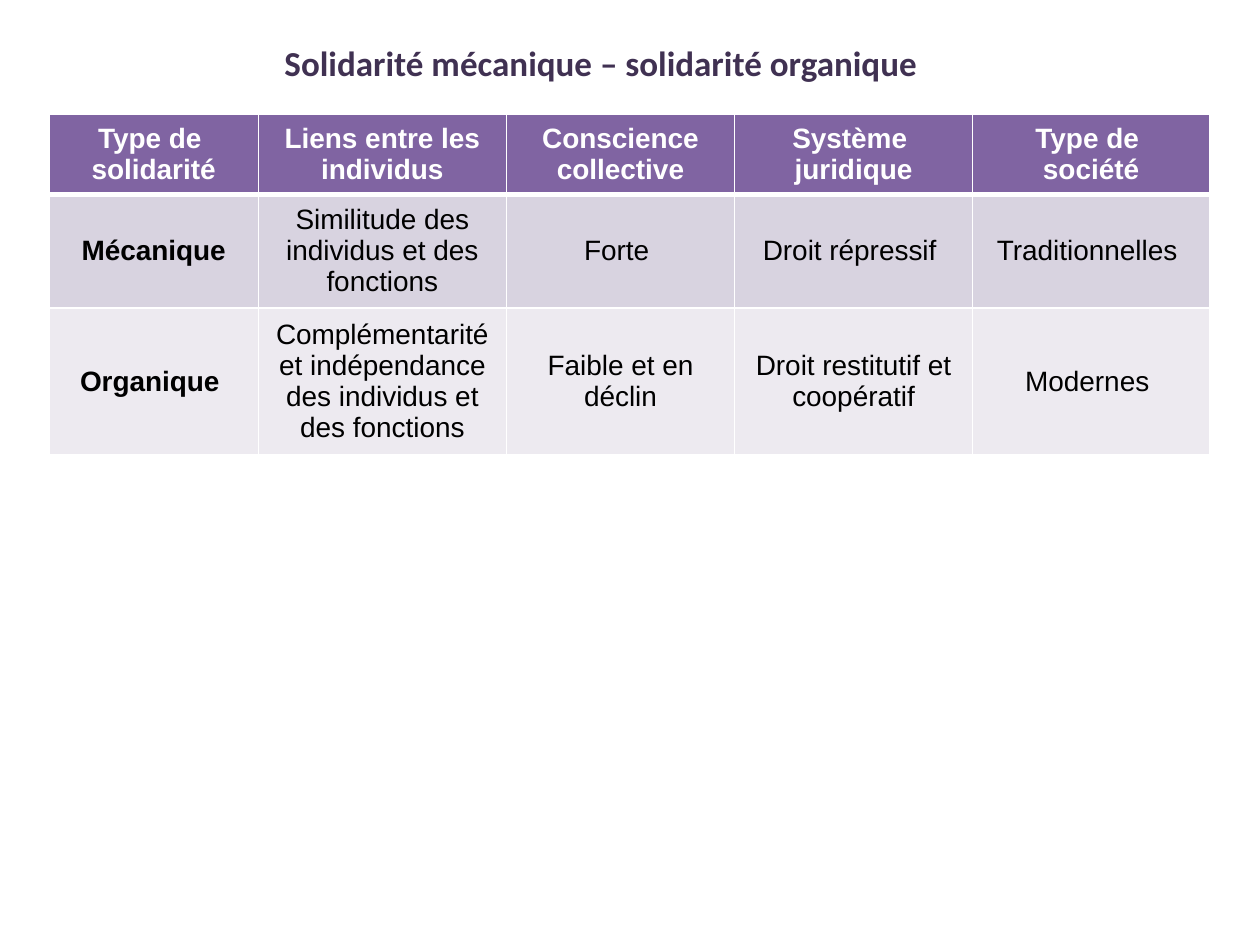
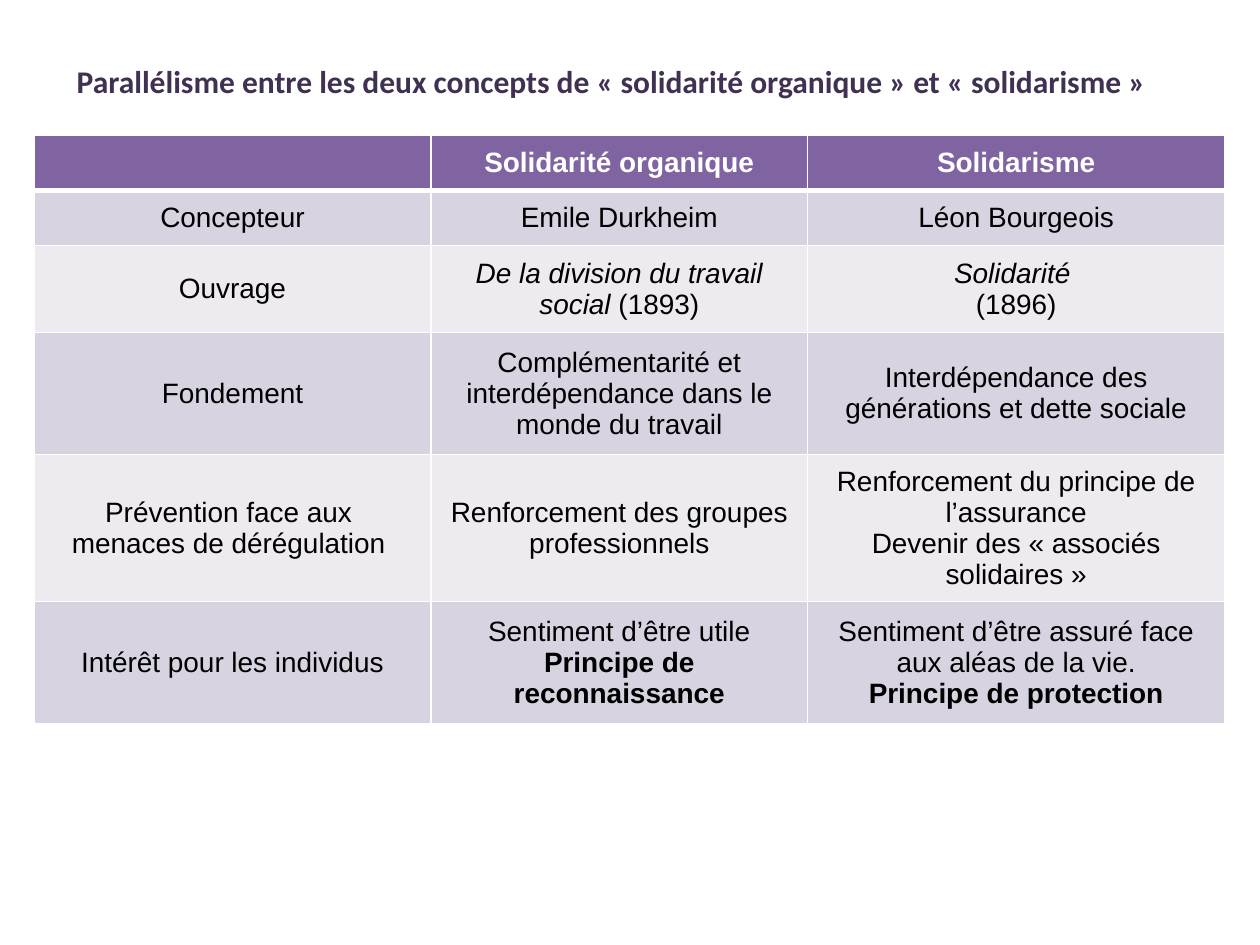
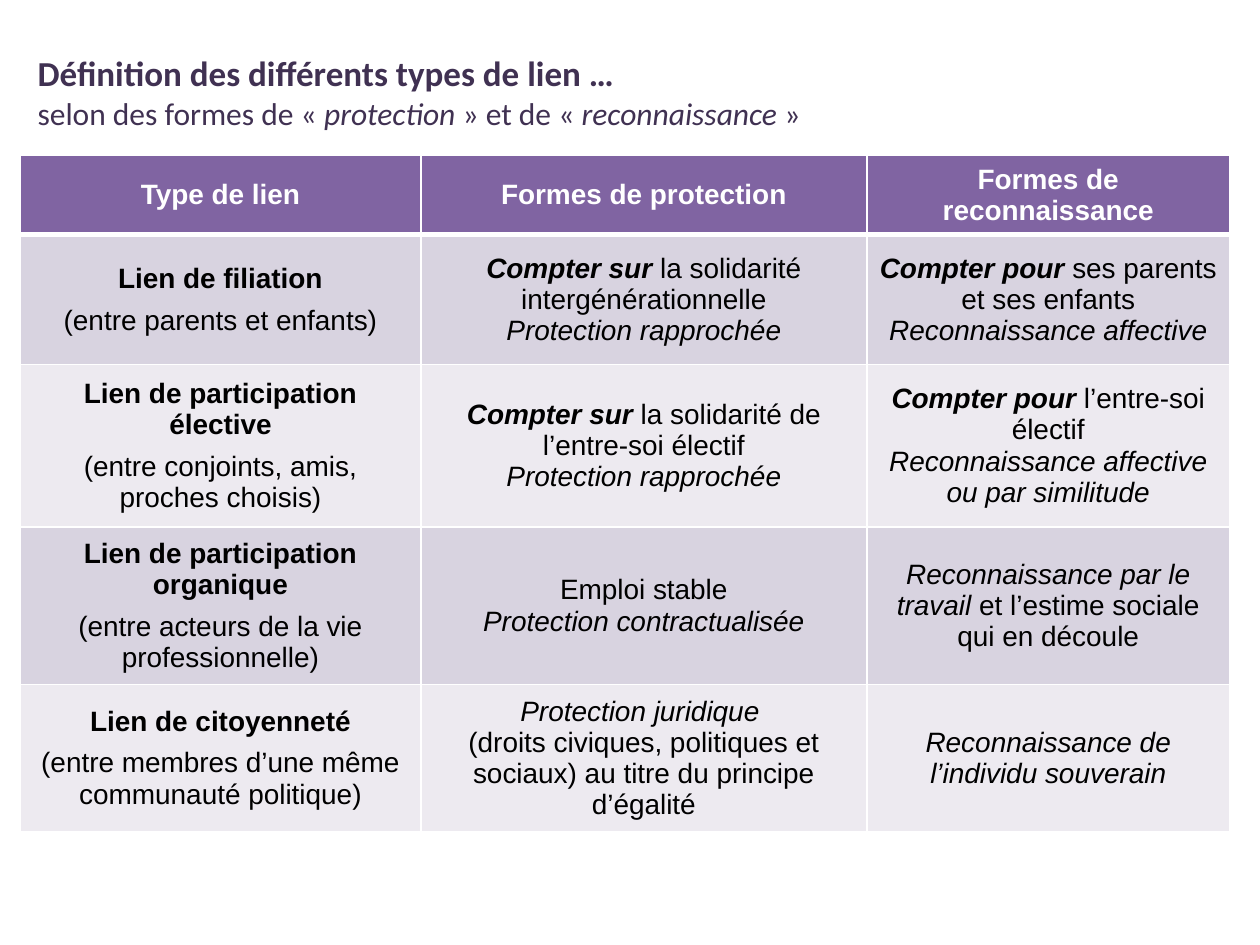
import dataclasses

import lxml.etree
import pptx
import pptx.dml.color
import pptx.enum.text
import pptx.oxml.ns
import pptx.util

Inches = pptx.util.Inches
Pt = pptx.util.Pt
Align = pptx.enum.text.PP_ALIGN


def rgb(code):
    return pptx.dml.color.RGBColor.from_string(code)


@dataclasses.dataclass(frozen=True)
class Theme:
    title_font: str = "Calibri"
    table_font: str = "Arial"
    title_color: str = "403152"
    header_text: str = "FFFFFF"
    body_text: str = "000000"
    header_fill: str = "8064A2"
    band_fills: tuple = ("D8D3E0", "EDEAF0")
    border_color: str = "FFFFFF"
    thin_border: float = 1
    header_border: float = 3
    title_size: int = 20
    subtitle_size: int = 18
    table_size: int = 16


THEME = Theme()


@dataclasses.dataclass
class Comparison:
    """One slide: (line, size) titles over a table; * toggles bold, _ italic."""
    title_box: tuple
    title: list
    table_origin: tuple
    columns: list
    row_heights: list
    rows: list
    title_wraps: bool = True
    label_gap: int = 0


COMPARISONS = [
    Comparison(
        title_box=(2.16, 0.28, 5.27, 0.44),
        title=[("*Solidarité mécanique – solidarité organique*", THEME.title_size)],
        title_wraps=False,
        table_origin=(0.39, 0.91),
        columns=[1.66, 1.97, 1.81, 1.89, 1.88],
        row_heights=[0.63, 0.9, 1.17],
        rows=[
            ["*Type de *\n*solidarité*", "*Liens entre les individus*",
             "*Conscience collective*", "*Système *\n*juridique*",
             "*Type de *\n*société*"],
            ["*Mécanique*", "Similitude des individus et des fonctions",
             "Forte ", "Droit répressif ", "Traditionnelles "],
            ["*Organique *",
             "Complémentarité et indépendance des individus et des fonctions",
             "Faible et en déclin", "Droit restitutif et coopératif", "Modernes "],
        ],
    ),
    Comparison(
        title_box=(0.51, 0.44, 9.69, 0.4),
        title=[("*Parallélisme entre les deux concepts de « solidarité organique »"
                " et « solidarisme »*", THEME.subtitle_size)],
        table_origin=(0.27, 1.07),
        columns=[3.15, 2.99, 3.31],
        row_heights=[0.44, 0.44, 0.69, 0.97, 0.97, 0.97],
        rows=[
            ["", "*Solidarité organique*", "*Solidarisme*"],
            ["Concepteur", "Emile Durkheim", "Léon Bourgeois"],
            ["Ouvrage", "_De la division du travail social _(1893)",
             "_Solidarité _\n(1896)"],
            ["Fondement",
             "Complémentarité et interdépendance dans le monde du travail",
             "Interdépendance des générations et dette sociale"],
            ["Prévention face aux \nmenaces de dérégulation ",
             "Renforcement des groupes professionnels",
             "Renforcement du principe de l’assurance\n"
             "Devenir des « associés solidaires »"],
            ["Intérêt pour les individus",
             "Sentiment d’être utile\n*Principe de reconnaissance*",
             "Sentiment d’être assuré face aux aléas de la vie.\n"
             "*Principe de protection*"],
        ],
    ),
    Comparison(
        title_box=(0.2, 0.36, 9.57, 0.74),
        title=[("*Définition des différents types de lien …*", THEME.title_size),
               ("selon des formes de « _protection_ » et de « _reconnaissance _»",
                THEME.subtitle_size)],
        table_origin=(0.16, 1.23),
        columns=[3.18, 3.54, 2.88],
        row_heights=[0.49, 1.03, 1.29, 1.12, 1.12],
        label_gap=6,
        rows=[
            ["*Type de lien*", "*Formes de protection*",
             "*Formes de reconnaissance*"],
            ["*Lien de filiation*\n(entre parents et enfants)",
             "*_Compter sur _*la solidarité intergénérationnelle\n"
             "_Protection rapprochée_",
             "*_Compter pour _*ses parents et ses enfants\n"
             "_Reconnaissance affective_"],
            ["*Lien de participation élective*\n"
             "(entre conjoints, amis, proches choisis)",
             "*_Compter sur _*la solidarité de l’entre-soi électif\n"
             "_Protection rapprochée_",
             "*_Compter pour _*l’entre-soi électif\n"
             "_Reconnaissance affective ou par similitude_"],
            ["*Lien de participation organique*\n"
             "(entre acteurs de la vie professionnelle)",
             "Emploi stable\n_Protection contractualisée_",
             "_Reconnaissance par le travail _et l’estime sociale qui en découle"],
            ["*Lien de citoyenneté*\n"
             "(entre membres d’une même communauté politique)",
             "_Protection juridique _\n"
             "(droits civiques, politiques et sociaux) au titre du principe d’égalité",
             "_Reconnaissance de l’individu souverain_"],
        ],
    ),
]


def styled_pieces(line):
    """Yield (text, bold, italic) for each stretch between * and _ toggles."""
    for bold_index, stretch in enumerate(line.split("*")):
        for italic_index, text in enumerate(stretch.split("_")):
            if text:
                yield text, bold_index % 2 == 1, italic_index % 2 == 1


def write_lines(frame, lines, font, color, align, gap=0):
    """Write (line, size) pairs as paragraphs, with gap points between them."""
    for index, (line, size) in enumerate(lines):
        paragraph = frame.add_paragraph() if index else frame.paragraphs[0]
        paragraph.alignment = align
        if index and gap:
            paragraph.space_before = Pt(gap)
        for text, bold, italic in styled_pieces(line):
            run = paragraph.add_run()
            run.text = text
            formats = {"name": font, "size": Pt(size), "bold": bold, "italic": italic}
            for name, value in formats.items():
                setattr(run.font, name, value)
            run.font.color.rgb = rgb(color)


def set_borders(cell, widths):
    properties = cell._tc.get_or_add_tcPr()
    qn = pptx.oxml.ns.qn
    for side, width in widths.items():
        line = lxml.etree.SubElement(properties, qn(f"a:ln{side}"), w=str(Pt(width)))
        fill = lxml.etree.SubElement(line, qn("a:solidFill"))
        lxml.etree.SubElement(fill, qn("a:srgbClr"), val=THEME.border_color)


def add_title(slide, comparison):
    box = slide.shapes.add_textbox(*map(Inches, comparison.title_box))
    frame = box.text_frame
    frame.word_wrap = comparison.title_wraps
    frame.auto_size = pptx.enum.text.MSO_AUTO_SIZE.SHAPE_TO_FIT_TEXT
    write_lines(frame, comparison.title, THEME.title_font, THEME.title_color, Align.LEFT)


def fill_cell(cell, text, row, gap):
    is_header = row == 0
    set_borders(cell, {
        "L": THEME.thin_border,
        "R": THEME.thin_border,
        "T": THEME.header_border if row == 1 else THEME.thin_border,
        "B": THEME.header_border if is_header else THEME.thin_border,
    })
    cell.fill.solid()
    cell.fill.fore_color.rgb = rgb(
        THEME.header_fill if is_header else THEME.band_fills[(row - 1) % 2])
    cell.vertical_anchor = pptx.enum.text.MSO_ANCHOR.MIDDLE
    lines = [(line, THEME.table_size) for line in text.split("\n")]
    color = THEME.header_text if is_header else THEME.body_text
    write_lines(cell.text_frame, lines, THEME.table_font, color, Align.CENTER, gap)


def add_comparison_table(slide, comparison):
    columns, heights = comparison.columns, comparison.row_heights
    box = (*comparison.table_origin, sum(columns), sum(heights))
    table = slide.shapes.add_table(len(heights), len(columns), *map(Inches, box)).table
    for column, width in zip(table.columns, columns):
        column.width = Inches(width)
    for row, height in zip(table.rows, heights):
        row.height = Inches(height)
    for row, texts in enumerate(comparison.rows):
        for column, text in enumerate(texts):
            gap = comparison.label_gap if column == 0 else 0
            fill_cell(table.cell(row, column), text, row, gap)


def main():
    deck = pptx.Presentation()
    deck.slide_width, deck.slide_height = Inches(10), Inches(7.5)
    for comparison in COMPARISONS:
        slide = deck.slides.add_slide(deck.slide_layouts[6])
        add_title(slide, comparison)
        add_comparison_table(slide, comparison)
    deck.save("out.pptx")


if __name__ == "__main__":
    main()
